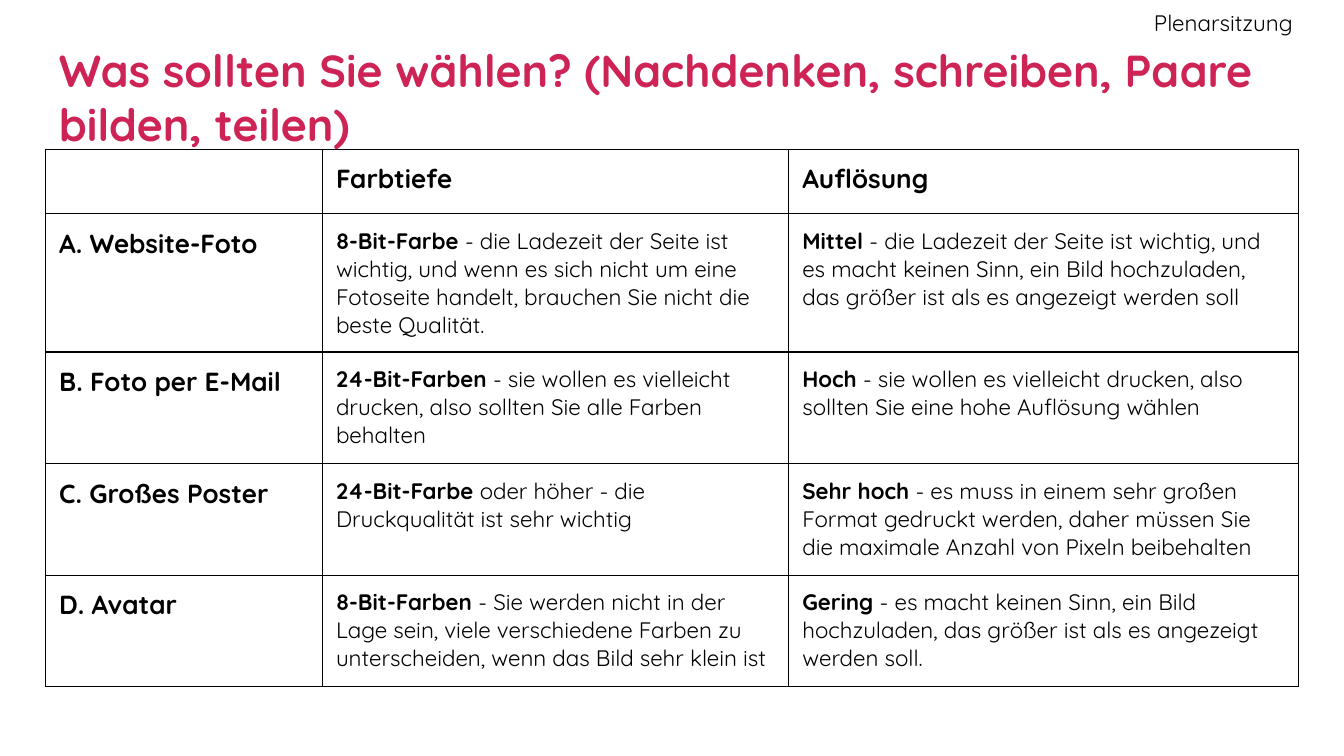
"""Build a slide with a table comparing colour depth and resolution choices."""
import pptx
import pptx.dml.color
import pptx.enum.text
import pptx.oxml
import pptx.oxml.ns
import pptx.util

Inches = pptx.util.Inches
Pt = pptx.util.Pt
ALIGN = pptx.enum.text.PP_ALIGN
MIDDLE = pptx.enum.text.MSO_ANCHOR.MIDDLE

TITLE = "Was sollten Sie wählen? (Nachdenken, schreiben, Paare bilden, teilen)"
SESSION = "Plenarsitzung"
HEADERS = ["", "Farbtiefe", "Auflösung"]
CHOICES = [
    ("A. Website-Foto",
     ("8-Bit-Farbe ", "- die Ladezeit der Seite ist wichtig, und wenn es sich nicht um eine "
      "Fotoseite handelt, brauchen Sie nicht die beste Qualität."),
     ("Mittel ", "- die Ladezeit der Seite ist wichtig, und es macht keinen Sinn, ein Bild "
      "hochzuladen, das größer ist als es angezeigt werden soll")),
    ("B. Foto per E-Mail",
     ("24-Bit-Farben ", "- sie wollen es vielleicht drucken, also sollten Sie alle Farben behalten"),
     ("Hoch ", "- sie wollen es vielleicht drucken, also sollten Sie eine hohe Auflösung wählen")),
    ("C. Großes Poster",
     ("24-Bit-Farbe ", "oder höher - die Druckqualität ist sehr wichtig"),
     ("Sehr hoch ", "- es muss in einem sehr großen Format gedruckt werden, daher müssen Sie "
      "die maximale Anzahl von Pixeln beibehalten")),
    ("D. Avatar",
     ("8-Bit-Farben ", "- Sie werden nicht in der Lage sein, viele verschiedene Farben zu "
      "unterscheiden, wenn das Bild sehr klein ist"),
     ("Gering ", "- es macht keinen Sinn, ein Bild hochzuladen, das größer ist als es "
      "angezeigt werden soll.")),
]

FONT = "Quicksand"
BLACK = pptx.dml.color.RGBColor(0x00, 0x00, 0x00)
CRIMSON = pptx.dml.color.RGBColor(0xCD, 0x23, 0x55)
SLIDE_WIDTH = Inches(10)
SLIDE_HEIGHT = SLIDE_WIDTH * 9 // 16
LEFT, TABLE_TOP, INSET = 0.34, 1.11, 0.1
COLUMN_WIDTHS = [2.06, 3.47, 3.79]
ROW_HEIGHTS = [0.48, 1.03, 0.83, 0.83, 0.83]
BORDER_WIDTH = Pt(0.75)


def add_span(para, text, size, bold=False, color=BLACK):
    span = para.add_run()
    span.text = text
    span.font.name = FONT
    span.font.size = Pt(size)
    span.font.bold = bold
    span.font.color.rgb = color


def add_text_box(slide, area, text, size, bold, color, align, right_inset):
    frame = slide.shapes.add_textbox(*map(Inches, area)).text_frame
    frame.word_wrap = True
    frame.vertical_anchor = MIDDLE
    frame.margin_left = frame.margin_top = frame.margin_bottom = Inches(INSET)
    frame.margin_right = Inches(right_inset)
    para = frame.paragraphs[0]
    para.alignment = align
    add_span(para, text, size, bold, color)


def add_borders(cell):
    properties = cell._tc.get_or_add_tcPr()
    for position, side in enumerate(("lnL", "lnR", "lnT", "lnB")):
        line = pptx.oxml.parse_xml(
            f'<a:{side} {pptx.oxml.ns.nsdecls("a")} w="{BORDER_WIDTH}">'
            f'<a:solidFill><a:srgbClr val="{BLACK}"/></a:solidFill></a:{side}>')
        properties.insert(position, line)


def fill_cell(cell, spans):
    cell.margin_left = cell.margin_right = Inches(INSET)
    cell.margin_top = cell.margin_bottom = Inches(INSET)
    cell.fill.background()
    add_borders(cell)
    para = cell.text_frame.paragraphs[0]
    para.font.size = Pt(14)
    for span in spans:
        add_span(para, *span)


def add_choice_table(slide):
    rows = [[[(text, 14, True)] if text else [] for text in HEADERS]]
    for name, *answers in CHOICES:
        rows.append([[(name, 14, True)]] + [
            [(choice, 12, True), (reason, 12)] for choice, reason in answers])
    table = slide.shapes.add_table(
        len(rows), len(HEADERS), Inches(LEFT), Inches(TABLE_TOP),
        Inches(sum(COLUMN_WIDTHS)), Inches(sum(ROW_HEIGHTS))).table
    table.first_row = table.horz_banding = False
    for column, width in zip(table.columns, COLUMN_WIDTHS):
        column.width = Inches(width)
    for row, height, contents in zip(table.rows, ROW_HEIGHTS, rows):
        row.height = Inches(height)
        for cell, spans in zip(row.cells, contents):
            fill_cell(cell, spans)


def main():
    deck = pptx.Presentation()
    deck.slide_width, deck.slide_height = SLIDE_WIDTH, SLIDE_HEIGHT
    slide = deck.slides.add_slide(deck.slide_layouts[6])
    add_text_box(slide, (LEFT, 0.34, sum(COLUMN_WIDTHS), 0.76), TITLE,
                 24, True, CRIMSON, ALIGN.LEFT, INSET)
    add_text_box(slide, (7.48, 0, 2.14, 0.34), SESSION,
                 12, False, BLACK, ALIGN.RIGHT, 0)
    add_choice_table(slide)
    deck.save("out.pptx")


if __name__ == "__main__":
    main()
